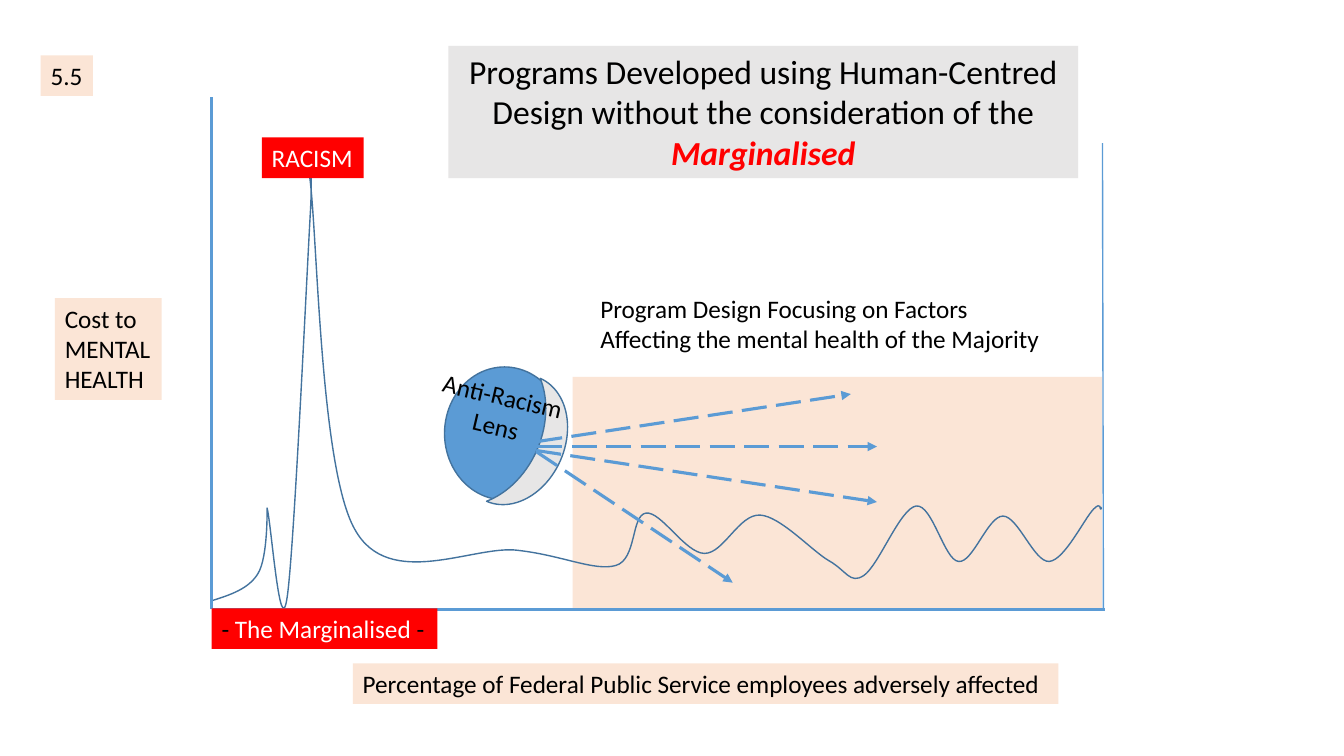
import pptx
import pptx.util
import pptx.dml.color
import pptx.enum.dml
import pptx.enum.shapes
import pptx.enum.text
import pptx.oxml.ns
import lxml.etree

Pt = pptx.util.Pt
RGB = pptx.dml.color.RGBColor
SHAPE = pptx.enum.shapes.MSO_SHAPE
ALIGN = pptx.enum.text.PP_ALIGN
qn = pptx.oxml.ns.qn

BLACK = RGB(0x00, 0x00, 0x00)
WHITE = RGB(0xFF, 0xFF, 0xFF)
RED = RGB(0xFF, 0x00, 0x00)
PEACH = RGB(0xFB, 0xE5, 0xD6)
GREY = RGB(0xE7, 0xE6, 0xE6)
BLUE = RGB(0x5B, 0x9B, 0xD5)
DARK_BLUE = RGB(0x43, 0x73, 0x9E)
FONT = "Calibri"

# Cost curve: a start point, then Bezier segments (two controls and an end)
CURVE_BOX = (151.2, 103, 635.8, 331.9)
CURVE_START = (151.2, 429.1)
CURVE = [
    ((164.9, 424.8), (177.8, 420.5), (184.3, 409.7)),
    ((191.5, 398.2), (190.8, 362.9), (190.8, 362.9)),
    ((193.7, 373), (200.2, 461.5), (205.2, 426.2)),
    ((210.2, 391), (218.9, 200.9), (221.8, 150.5)),
    ((224.6, 100.1), (216, 87.1), (221, 124.6)),
    ((226.8, 162.7), (228.2, 333.4), (253.4, 378)),
    ((277.9, 422.6), (339.1, 388.8), (370.1, 393.1)),
    ((401.8, 396.7), (424.8, 408.2), (439.9, 403.9)),
    ((455, 399.6), (450.7, 367.9), (461.5, 366.5)),
    ((472.3, 365), (489.6, 395.3), (503.3, 395.3)),
    ((517, 395.3), (527.8, 367.2), (542.9, 367.9)),
    ((557.3, 368.6), (579.6, 393.1), (591.8, 400.3)),
    ((604.8, 407.5), (607, 417.6), (617, 411.1)),
    ((627.8, 403.9), (643, 362.9), (654.5, 361.4)),
    ((666, 360), (674.6, 400.3), (684.7, 401)),
    ((694.8, 402.5), (705.6, 368.6), (716.4, 368.6)),
    ((727.2, 368.6), (738.7, 401.8), (749.5, 401)),
    ((760.3, 400.3), (774.7, 370.1), (781.2, 363.6)),
    ((787, 357.8), (785.5, 364.3), (786.2, 363.6)),
    ((787, 363.6), (787, 362.9), (786.2, 362.2)),
]


def add_block(s, kind, box, fill, line=None, rotation=0):
    sp = s.shapes.add_shape(kind, *[Pt(v) for v in box])
    sp.shadow.inherit = False
    sp.rotation = rotation
    sp.fill.solid()
    sp.fill.fore_color.rgb = fill
    if line is None:
        sp.line.fill.background()
    else:
        sp.line.color.rgb = line
        sp.line.width = Pt(1)


def add_label(s, box, paragraphs, fill=None, size=18, align=ALIGN.LEFT, wrap=False, rotation=0):
    """Each paragraph is a list of (text, colour) runs."""
    sp = s.shapes.add_textbox(*[Pt(v) for v in box])
    sp.rotation = rotation
    if fill is not None:
        sp.fill.solid()
        sp.fill.fore_color.rgb = fill
    tf = sp.text_frame
    tf.word_wrap = wrap
    for i, runs in enumerate(paragraphs):
        p = tf.paragraphs[0] if i == 0 else tf.add_paragraph()
        p.alignment = align
        for text, color in runs:
            r = p.add_run()
            r.text = text
            r.font.name = FONT
            r.font.size = Pt(size)
            r.font.color.rgb = color
    return sp


def add_line(s, start, end, width=2.25, arrow=False):
    c = s.shapes.add_connector(pptx.enum.shapes.MSO_CONNECTOR.STRAIGHT,
                               *[Pt(v) for v in start + end])
    c.line.color.rgb = BLUE
    c.line.width = Pt(width)
    if arrow:
        c.line.dash_style = pptx.enum.dml.MSO_LINE.LONG_DASH
        ln = c._element.spPr.find(qn("a:ln"))
        lxml.etree.SubElement(ln, qn("a:tailEnd"), type="triangle")
    lxml.etree.SubElement(c._element.spPr, qn("a:effectLst"))


def add_curve(s):
    left, top, width, height = [Pt(v) for v in CURVE_BOX]
    builder = s.shapes.build_freeform(Pt(CURVE_START[0]), Pt(CURVE_START[1]))
    builder.add_line_segments([(Pt(x), Pt(y)) for *_, (x, y) in CURVE], close=False)
    sp = builder.convert_to_shape()
    sp.left, sp.top, sp.width, sp.height = left, top, width, height

    # Bend the straight segments, in coordinates of the box
    outline = next(sp._element.iter(qn("a:path")))
    outline.set("w", str(width))
    outline.set("h", str(height))
    for child in list(outline):
        outline.remove(child)
    for tag, points in [("a:moveTo", [CURVE_START])] + [("a:cubicBezTo", c) for c in CURVE]:
        step = lxml.etree.SubElement(outline, qn(tag))
        for x, y in points:
            lxml.etree.SubElement(step, qn("a:pt"), x=str(Pt(x) - left), y=str(Pt(y) - top))

    sp.shadow.inherit = False
    sp.fill.background()
    sp.line.color.rgb = DARK_BLUE
    sp.line.width = Pt(1)


def main():
    prs = pptx.Presentation()
    prs.slide_width, prs.slide_height = Pt(960), Pt(540)
    s = prs.slides.add_slide(prs.slide_layouts[6])

    # Majority area and cost curve
    add_block(s, SHAPE.RECTANGLE, (409, 269.3, 378, 165.6), PEACH)
    add_curve(s)

    # Axes
    add_label(s, (252, 473.8, 504, 29), [[(
        "Percentage of Federal Public Service employees adversely affected", BLACK)]], PEACH)
    add_line(s, (151.2, 435.2), (789, 435.2))
    add_line(s, (151.2, 435.2), (151.2, 69))
    add_line(s, (788.2, 435.6), (787.5, 102.2), width=1)
    add_label(s, (39.2, 213, 76.3, 72.7),
              [[(word, BLACK)] for word in ("Cost to", "MENTAL", "HEALTH")], PEACH)

    # Labels on the chart
    add_label(s, (187, 98.2, 72.7, 29), [[("RACISM", WHITE)]], RED)
    add_label(s, (421.7, 206, 341.3, 51), [[(
        "Program Design Focusing on Factors Affecting the mental health of the Majority",
        BLACK)]], wrap=True)
    add_label(s, (151.2, 434.5, 161.3, 29),
              [[("- ", BLACK), ("The Marginalised ", WHITE), ("-", BLACK)]], RED)

    # Title
    title = add_label(s, (320.2, 32.8, 450, 94.5), [[
        ("Programs Developed using Human-Centred Design without the consideration of the ", BLACK),
        ("Marginalised", RED)]], GREY, size=24, align=ALIGN.CENTER, wrap=True)
    font = title.text_frame.paragraphs[0].runs[-1].font
    font.bold = font.italic = True

    # Eye with its lens
    add_block(s, SHAPE.OVAL, (317.5, 262.1, 85.7, 95), BLUE, DARK_BLUE)
    add_block(s, SHAPE.MOON, (365.2, 273.6, 36.7, 95.8), GREY, DARK_BLUE, rotation=203.6)
    add_label(s, (302.7, 267.8, 103, 72.7), [[("Anti-Racism", BLACK)], [("Lens", BLACK)]],
              align=ALIGN.CENTER, wrap=True, rotation=13.2)

    # Lines of sight
    for start, end in [((383.8, 315.4), (607.7, 281.5)),
                       ((383.8, 319), (626.4, 319)),
                       ((383, 321.8), (626.4, 358.6)),
                       ((383, 322.6), (523.4, 416.2))]:
        add_line(s, start, end, arrow=True)

    # Slide number
    add_label(s, (29, 39.6, 37.4, 29), [[("5.5", BLACK)]], PEACH)

    prs.save("out.pptx")


if __name__ == "__main__":
    main()
